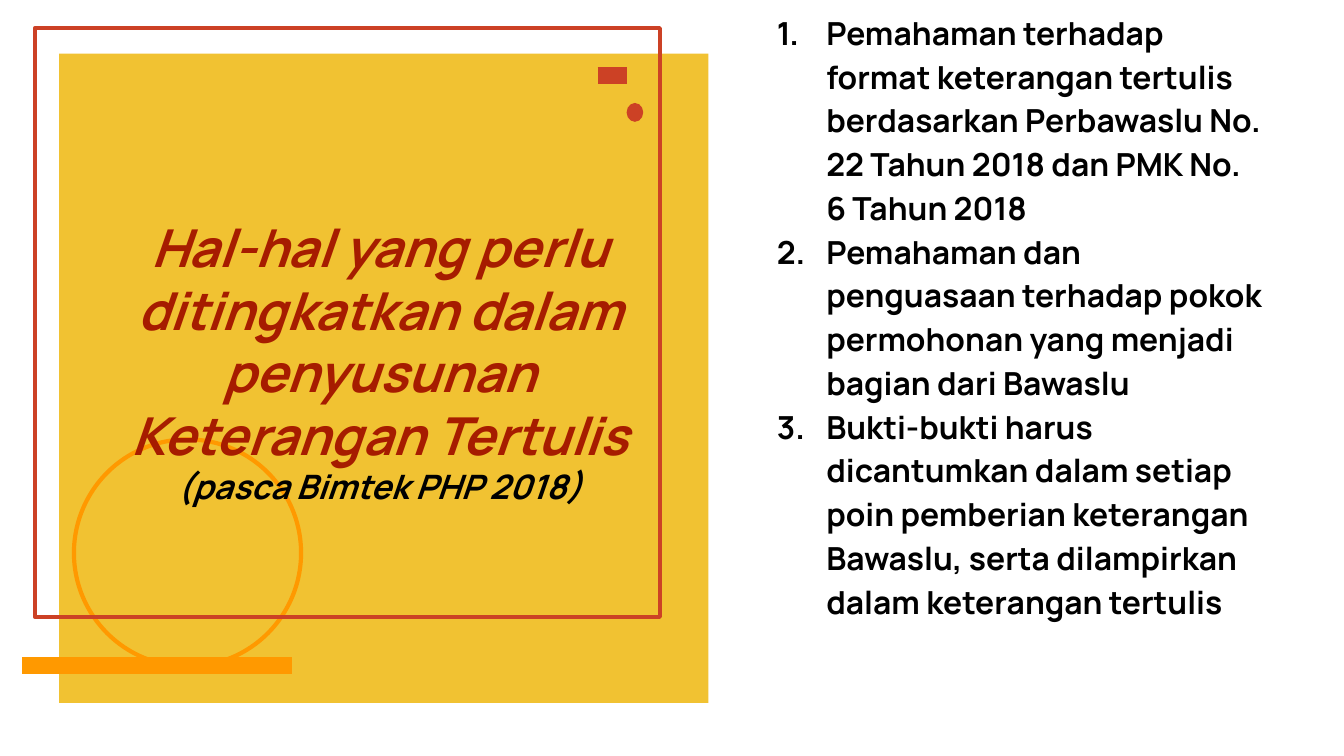
from lxml.etree import SubElement
from pptx import Presentation
from pptx.dml.color import RGBColor
from pptx.enum.shapes import MSO_CONNECTOR as Connector, MSO_SHAPE as Preset
from pptx.enum.text import MSO_ANCHOR as Anchor, PP_ALIGN as Align
from pptx.oxml.ns import qn
from pptx.util import Pt

YELLOW, ORANGE, RED = "F1C232", "FF9900", "CC4125"
DARK_RED, BLACK = "A61C00", "000000"


def color(value):
    return RGBColor.from_string(value)


class SlideBuilder:
    font = "Manrope"
    inset = 7.2
    outline = 2.25
    bar_width = 9

    def __init__(self, slide):
        self.slide = slide

    def shape(self, preset, box, fill=None, line=None):
        shape = self.slide.shapes.add_shape(preset, *map(Pt, box))
        shape.shadow.inherit = False
        if fill:
            shape.fill.solid()
            shape.fill.fore_color.rgb = color(fill)
        else:
            shape.fill.background()
        if line:
            shape.line.color.rgb = color(line)
            shape.line.width = Pt(self.outline)
            SubElement(shape.line._ln, qn("a:round"))
        else:
            shape.line.fill.background()

    def bar(self, left, right, y, hue):
        bar = self.slide.shapes.add_connector(
            Connector.STRAIGHT, Pt(left), Pt(y), Pt(right), Pt(y))
        bar.line.color.rgb = color(hue)
        bar.line.width = Pt(self.bar_width)
        SubElement(bar._element.spPr, qn("a:effectLst"))

    def text_frame(self, box):
        frame = self.slide.shapes.add_textbox(*map(Pt, box)).text_frame
        settings = {"word_wrap": True, "vertical_anchor": Anchor.TOP}
        for side in ("left", "top", "right", "bottom"):
            settings[f"margin_{side}"] = Pt(self.inset)
        for name, value in settings.items():
            setattr(frame, name, value)
        return frame

    def run(self, paragraph, text, size, hue, italic=False):
        run = paragraph.add_run()
        run.text = text
        style = {"name": self.font, "size": Pt(size), "bold": True, "italic": italic}
        for name, value in style.items():
            setattr(run.font, name, value)
        run.font.color.rgb = color(hue)

    def title(self, box, parts):
        paragraph = self.text_frame(box).paragraphs[0]
        paragraph.alignment = Align.CENTER
        for text, size, hue in parts:
            self.run(paragraph, text, size, hue, italic=True)

    def numbered_list(self, box, items, size, indent, hanging):
        frame = self.text_frame(box)
        for index, item in enumerate(items):
            paragraph = frame.add_paragraph() if index else frame.paragraphs[0]
            paragraph.line_spacing = 1.15
            props = paragraph._p.get_or_add_pPr()
            props.set("marL", str(Pt(indent)))
            props.set("indent", str(-Pt(hanging)))
            bullet_color = SubElement(props, qn("a:buClr"))
            SubElement(bullet_color, qn("a:srgbClr"), val=BLACK)
            SubElement(props, qn("a:buFont"), typeface=self.font)
            SubElement(props, qn("a:buAutoNum"), type="arabicPeriod")
            self.run(paragraph, item, size, BLACK)


def main():
    deck = Presentation()
    deck.slide_width, deck.slide_height = Pt(720), Pt(405)
    page = SlideBuilder(deck.slides.add_slide(deck.slide_layouts[6]))

    # Points to improve
    points = [
        "Pemahaman terhadap format keterangan tertulis berdasarkan "
        "Perbawaslu No. 22 Tahun 2018 dan PMK No. 6 Tahun 2018",
        "Pemahaman dan penguasaan terhadap pokok permohonan yang "
        "menjadi bagian dari Bawaslu",
        "Bukti-bukti harus dicantumkan dalam setiap poin pemberian "
        "keterangan Bawaslu, serta dilampirkan dalam keterangan tertulis",
    ]
    page.numbered_list((399.6, -2.9, 283.7, 377.3), points,
                       size=17, indent=36, hanging=26.5)

    # Yellow panel and ring behind the title
    page.shape(Preset.RECTANGLE, (31.7, 28.8, 347.8, 347.8), fill=YELLOW)
    page.shape(Preset.OVAL, (39.6, 235.4, 121.7, 121.7), line=ORANGE)

    # Title
    page.title((53.3, 108, 300.2, 45.4), [
        ("Hal-hal yang perlu ditingkatkan dalam penyusunan Keterangan Tertulis ",
         28, DARK_RED),
        ("(pasca Bimtek PHP 2018)", 18, BLACK),
    ])

    # Frame and accents
    page.bar(12, 156.5, 356.4, ORANGE)
    page.shape(Preset.RECTANGLE, (18.7, 15.1, 334.8, 315.4), line=RED)
    page.bar(320.2, 335.7, 40.3, RED)
    page.shape(Preset.OVAL, (335.7, 55.2, 8.9, 10.1), fill=RED)

    deck.save("out.pptx")


if __name__ == "__main__":
    main()
